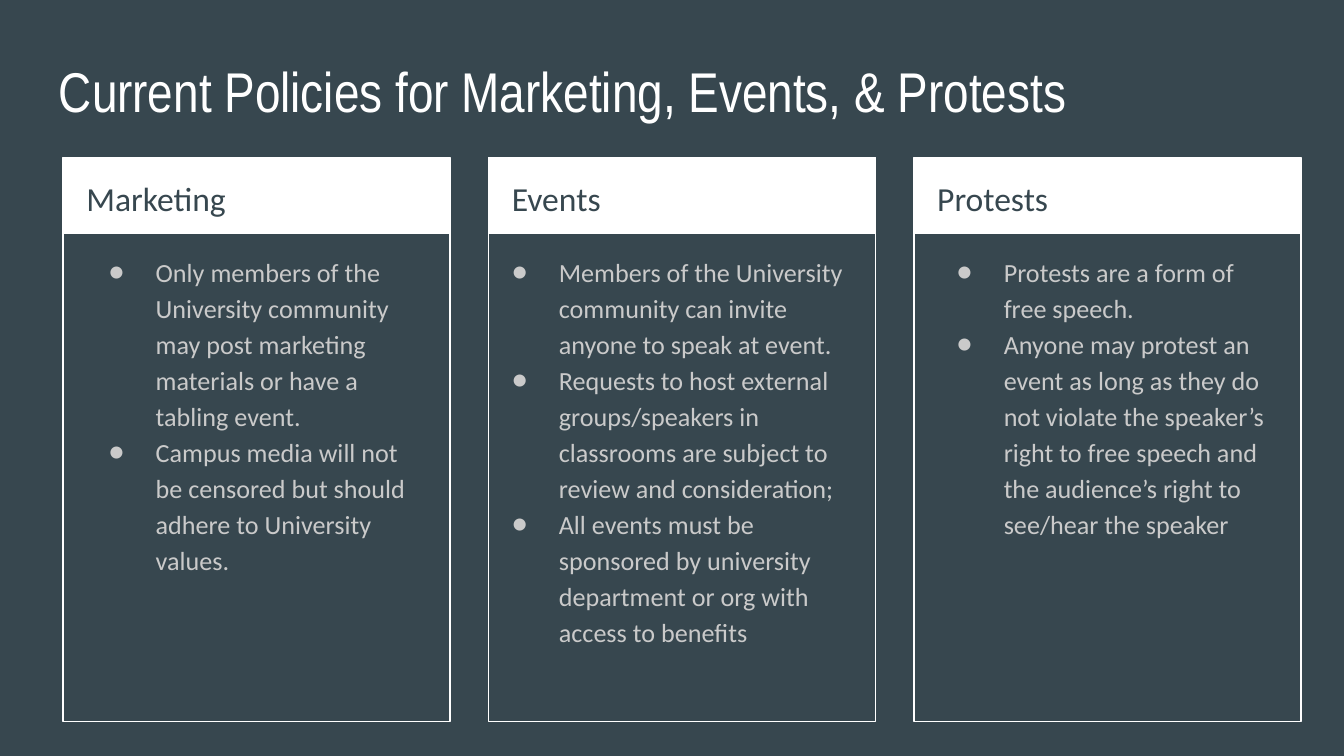
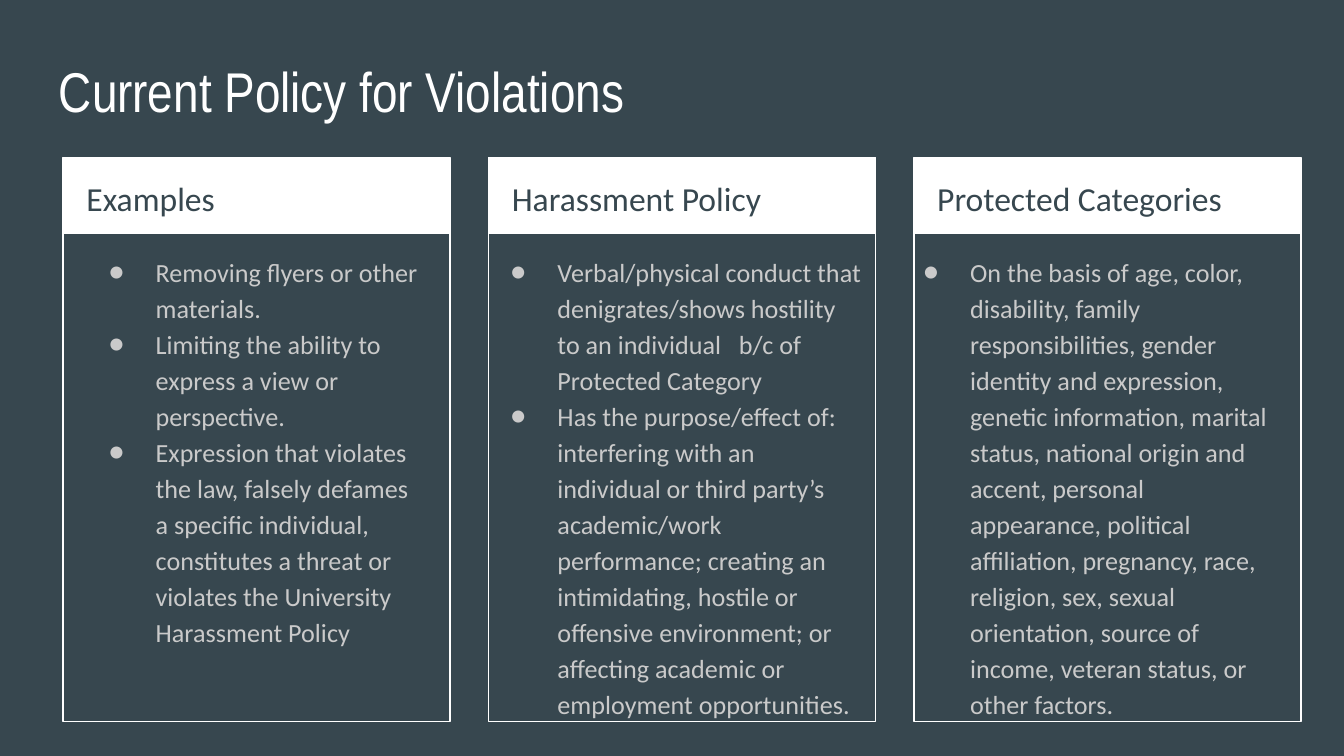
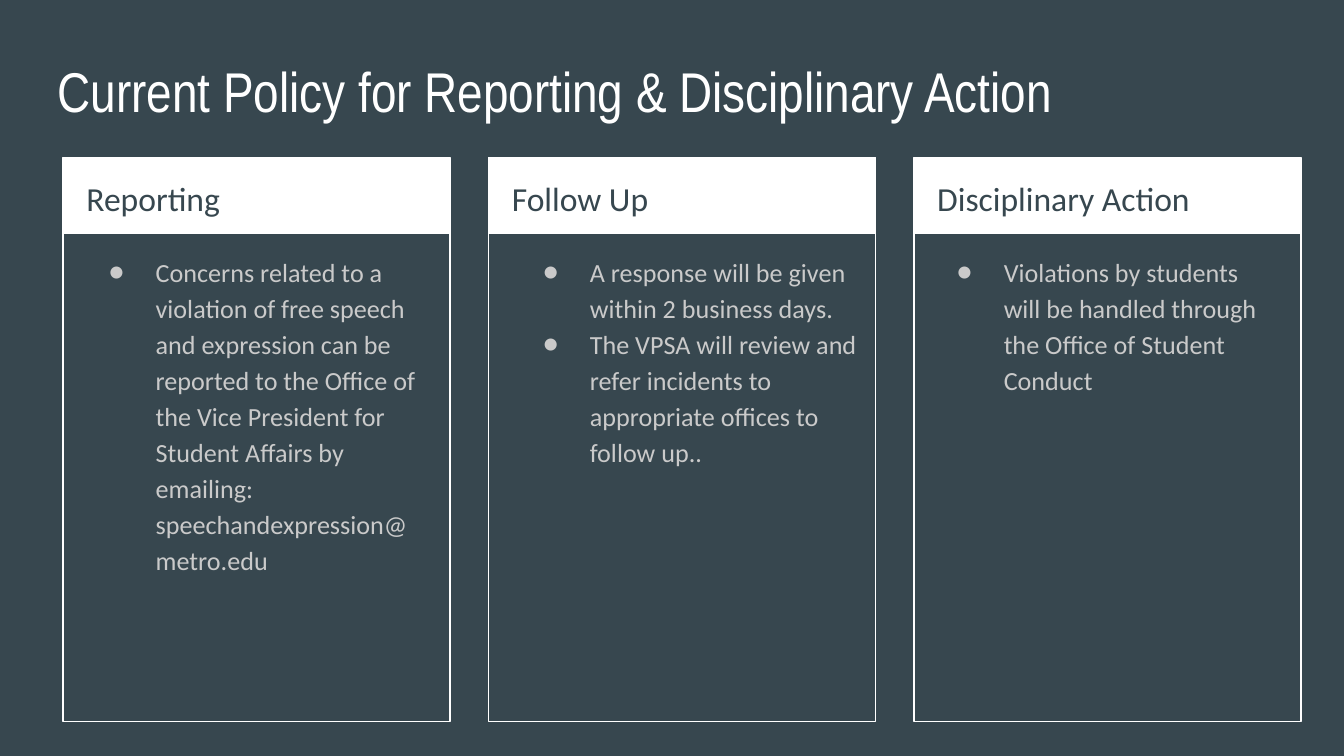
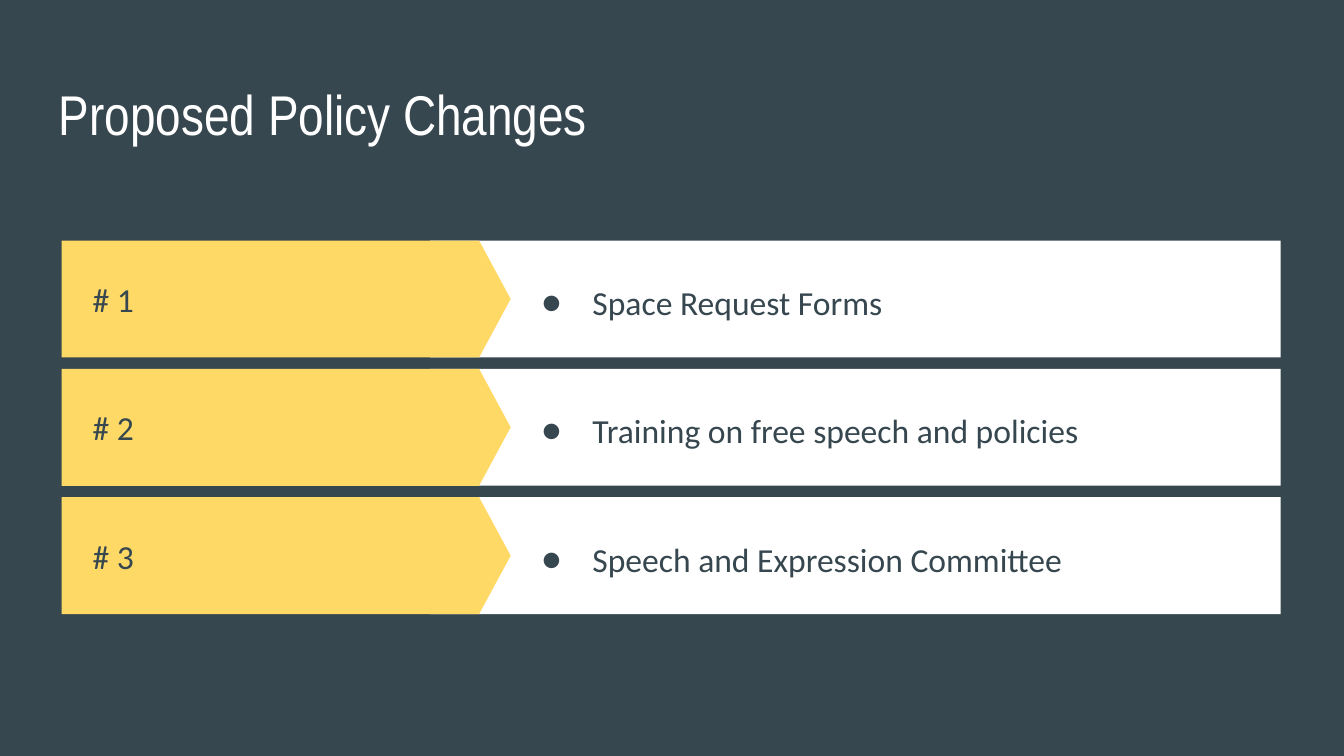
from dataclasses import dataclass
from typing import Any

import lxml.etree
import pptx
import pptx.dml.color
import pptx.enum.shapes
import pptx.enum.text
import pptx.oxml.ns
import pptx.util

# Scale: 200 px to the inch
PX = 4572
SLIDE_WIDTH, SLIDE_HEIGHT = 2000, 1125
INSET = 20

# Shared colours and fonts
SLATE, WHITE, GREY, YELLOW = "37474F", "FFFFFF", "CACACA", "FFD966"
TITLE_FONT, TEXT_FONT = "Arial Narrow", "Calibri"

# Column panels
PANEL_LEFT, PANEL_TOP, PANEL_STEP = 94, 234, 633
PANEL_WIDTH, PANEL_HEIGHT, HEADER_HEIGHT = 576, 840, 114
BODY_TOP = 354

# Numbered rows
ROW_TOP, ROW_STEP, ROW_HEIGHT = 358, 191, 174

RECTANGLE = pptx.enum.shapes.MSO_SHAPE.RECTANGLE
PENTAGON = pptx.enum.shapes.MSO_SHAPE.PENTAGON
MIDDLE = pptx.enum.text.MSO_ANCHOR.MIDDLE
TOP = pptx.enum.text.MSO_ANCHOR.TOP


@dataclass(frozen=True)
class Box:
    left: int
    top: int
    width: int
    height: int

    def emu(self) -> list[int]:
        return [side * PX for side in (self.left, self.top, self.width, self.height)]


@dataclass(frozen=True)
class TextStyle:
    size: int
    color: str
    font: str = TEXT_FONT
    line_spacing: float | None = None
    hanging: int = 0  # bullet indent; 0 means no bullet
    anchor: Any = TOP


@dataclass(frozen=True)
class Panel:
    heading: str
    bullets: tuple[str, ...]
    body_shift: int = 18  # from the panel's left edge
    body_width: int = 542
    body_height: int = 612


@dataclass(frozen=True)
class PanelPage:
    title: str
    panels: tuple[Panel, ...]
    title_left: int = 68


TITLE = TextStyle(30, WHITE, TITLE_FONT)
HEADING = TextStyle(18, SLATE, line_spacing=1.15)
BODY = TextStyle(14, GREY, line_spacing=1.15, hanging=70)
ROW_LABEL = TextStyle(18, SLATE, anchor=MIDDLE)
ROW_ITEM = TextStyle(18, SLATE, line_spacing=1.15, hanging=76, anchor=MIDDLE)

PANEL_PAGES = (
    PanelPage("Current Policies for Marketing, Events, & Protests", (
        Panel("Marketing", (
            "Only members of the University community may post marketing materials "
            "or have a tabling event.",
            "Campus media will not be censored but should adhere to University values.",
        )),
        Panel("Events", (
            "Members of the University community can invite anyone to speak at event.",
            "Requests to host external groups/speakers in classrooms are subject to "
            "review and consideration;",
            "All events must be sponsored by university department or org with access "
            "to benefits",
        ), -15, 604, 720),
        Panel("Protests", (
            "Protests are a form of free speech.",
            "Anyone may protest an event as long as they do not violate the speaker’s "
            "right to free speech and the audience’s right to see/hear the speaker",
        ), 14, 542, 494),
    )),
    PanelPage("Current Policy for Violations", (
        Panel("Examples", (
            "Removing flyers or other materials.",
            "Limiting the ability to express a view or perspective.",
            "Expression that violates the law, falsely defames a specific individual, "
            "constitutes a threat or violates the University Harassment Policy",
        )),
        Panel("Harassment Policy", (
            "Verbal/physical conduct that denigrates/shows hostility to an individual   "
            "b/c of Protected Category",
            "Has the purpose/effect of: interfering with an individual or third party’s "
            "academic/work performance; creating an intimidating, hostile or offensive "
            "environment; or affecting academic or employment opportunities.",
        ), -17, 592, 446),
        Panel("Protected Categories", (
            "On the basis of age, color, disability, family responsibilities, gender "
            "identity and expression, genetic information, marital status, national "
            "origin and accent, personal appearance, political affiliation, pregnancy, "
            "race, religion, sex, sexual orientation, source of income, veteran status, "
            "or other factors.",
        ), -36, 592, 494),
    )),
    PanelPage("Current Policy for Reporting & Disciplinary Action", (
        Panel("Reporting", (
            "Concerns related to a violation of free speech and expression can be "
            "reported to the Office of the Vice President for Student Affairs by "
            "emailing: speechandexpression@metro.edu",
        )),
        Panel("Follow Up", (
            "A response will be given within 2 business days.",
            "The VPSA will review and refer incidents to appropriate offices to "
            "follow up..",
        ), 31, 542, 446),
        Panel("Disciplinary Action", (
            "Violations by students will be handled through the Office of Student Conduct",
        ), 14, 542, 494),
    ), 66),
)

CHANGES = (
    "Space Request Forms",
    "Training on free speech and policies",
    "Speech and Expression Committee",
)


# Helpers
def rgb(value: str) -> pptx.dml.color.RGBColor:
    return pptx.dml.color.RGBColor.from_string(value)


def set_format(target: Any, values: dict[str, Any]) -> None:
    for name, value in values.items():
        setattr(target, name, value)


def add_bullet(para: Any, style: TextStyle) -> None:
    properties = para._p.get_or_add_pPr()
    properties.set("marL", str(100 * PX))
    properties.set("indent", str(-style.hanging * PX))
    qn = pptx.oxml.ns.qn
    color = lxml.etree.SubElement(properties, qn("a:buClr"))
    lxml.etree.SubElement(color, qn("a:srgbClr"), val=style.color)
    lxml.etree.SubElement(properties, qn("a:buFont"), typeface=style.font)
    lxml.etree.SubElement(properties, qn("a:buChar"), char="●")


def add_text(page: Any, box: Box, style: TextStyle, *lines: str) -> None:
    frame = page.shapes.add_textbox(*box.emu()).text_frame
    margins = {f"margin_{side}": INSET * PX for side in ("left", "top", "right", "bottom")}
    set_format(frame, {"word_wrap": True, "vertical_anchor": style.anchor, **margins})
    for index, line in enumerate(lines):
        para = frame.add_paragraph() if index else frame.paragraphs[0]
        if style.line_spacing:
            para.line_spacing = style.line_spacing
        if style.hanging:
            add_bullet(para, style)
        span = para.add_run()
        span.text = line
        set_format(span.font, {"name": style.font, "size": pptx.util.Pt(style.size)})
        span.font.color.rgb = rgb(style.color)


def add_block(group: Any, kind: Any, box: Box, fill: str = "", line: str = "") -> Any:
    shape = group.shapes.add_shape(kind, *box.emu())
    shape.shadow.inherit = False
    if fill:
        shape.fill.solid()
        shape.fill.fore_color.rgb = rgb(fill)
    else:
        shape.fill.background()
    if line:
        shape.line.color.rgb = rgb(line)
        shape.line.width = pptx.util.Pt(0.75)
    else:
        shape.line.fill.background()
    return shape


def add_page(deck: Any, title: str, left: int, top: int) -> Any:
    page = deck.slides.add_slide(deck.slide_layouts[6])
    page.background.fill.solid()
    page.background.fill.fore_color.rgb = rgb(SLATE)
    add_text(page, Box(left, top, 1864, 126), TITLE, title)
    return page


# Repeated elements
def add_panel(page: Any, panel: Panel, column: int) -> None:
    left = PANEL_LEFT + column * PANEL_STEP
    group = page.shapes.add_group_shape()
    add_block(group, RECTANGLE, Box(left, PANEL_TOP, PANEL_WIDTH, HEADER_HEIGHT), fill=WHITE)
    add_block(group, RECTANGLE, Box(left, PANEL_TOP, PANEL_WIDTH, PANEL_HEIGHT), line=WHITE)
    add_text(page, Box(left + 15, PANEL_TOP + 2, 546, 100), HEADING, panel.heading)
    body = Box(left + panel.body_shift, BODY_TOP, panel.body_width, panel.body_height)
    add_text(page, body, BODY, *panel.bullets)


def add_row(page: Any, change: str, index: int) -> None:
    top = ROW_TOP + index * ROW_STEP
    group = page.shapes.add_group_shape()
    add_block(group, RECTANGLE, Box(640, top, 1266, ROW_HEIGHT), fill=WHITE)
    arrow = add_block(group, PENTAGON, Box(92, top, 668, ROW_HEIGHT), fill=YELLOW)
    arrow.adjustments[0] = 0.27
    add_text(page, Box(118, top, 530, ROW_HEIGHT), ROW_LABEL, f"# {index + 1}")
    add_text(page, Box(762, top, 1118, ROW_HEIGHT), ROW_ITEM, change)


def main() -> None:
    deck = pptx.Presentation()
    set_format(deck, {"slide_width": SLIDE_WIDTH * PX, "slide_height": SLIDE_HEIGHT * PX})

    # Current policies
    for content in PANEL_PAGES:
        page = add_page(deck, content.title, content.title_left, 64)
        for column, panel in enumerate(content.panels):
            add_panel(page, panel, column)

    # Proposed changes
    page = add_page(deck, "Proposed Policy Changes", 68, 98)
    for index, change in enumerate(CHANGES):
        add_row(page, change, index)

    deck.save("out.pptx")


if __name__ == "__main__":
    main()
